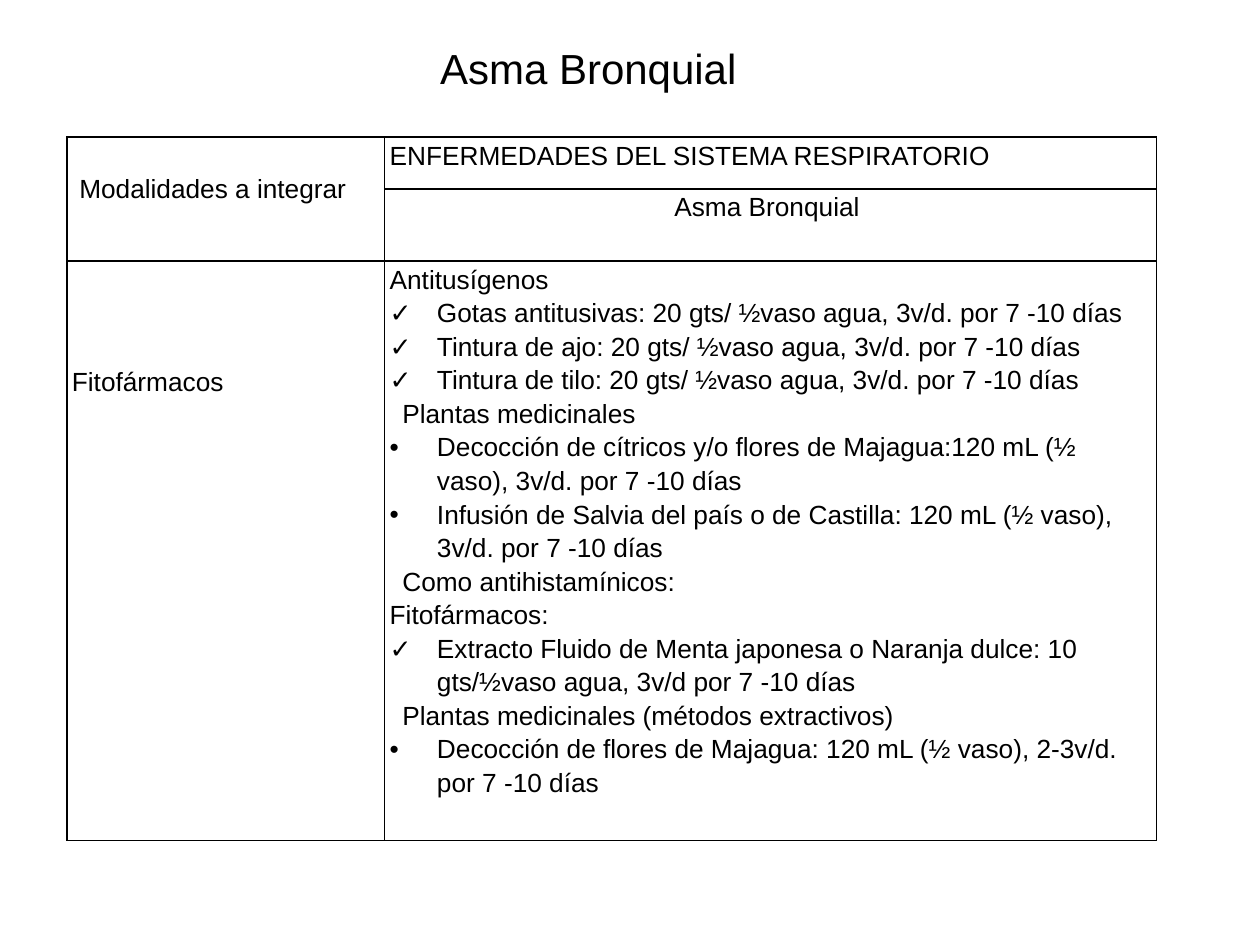
"""Builds a slide with a treatment table for bronchial asthma."""
import pptx
import pptx.dml.color
import pptx.enum.text
import pptx.oxml
import pptx.oxml.ns
import pptx.util

Pt = pptx.util.Pt
ALIGN = pptx.enum.text.PP_ALIGN
NS = pptx.oxml.ns.nsdecls("a")


def rgb(value):
    return pptx.dml.color.RGBColor.from_string(value)


def apply(obj, formats):
    for name, value in formats.items():
        setattr(obj, name, value)


class Deck:
    ink = "000000"
    font = {"name": "Arial"}
    body = {"line_spacing": 1.15, "space_before": Pt(0), "space_after": Pt(0)}
    margins = {"margin_left": Pt(2.9), "margin_right": Pt(2.9),
               "margin_top": Pt(0), "margin_bottom": Pt(0)}

    def __init__(self, prs):
        self.s = prs.slides.add_slide(prs.slide_layouts[6])

    def paragraph(self, p, text, size, formats):
        apply(p, formats)
        r = p.add_run()
        r.text = text
        apply(r.font, {**self.font, "size": Pt(size)})
        r.font.color.rgb = rgb(self.ink)

    def indent(self, p, left, bullet):
        pPr = p._p.get_or_add_pPr()
        pPr.set("marL", str(Pt(left)))
        pPr.set("indent", str(Pt(-left if bullet else 0)))
        if bullet:
            pPr.append(pptx.oxml.parse_xml(f'<a:buFont {NS} typeface="Arial"/>'))
            pPr.append(pptx.oxml.parse_xml(f'<a:buChar {NS} char="{bullet}"/>'))

    def title(self, text, left, top, width, height):
        sp = self.s.shapes.add_textbox(Pt(left), Pt(top), Pt(width), Pt(height))
        tf = sp.text_frame
        tf.word_wrap = True
        self.paragraph(tf.paragraphs[0], text, 24,
                       {"alignment": ALIGN.CENTER, "line_spacing": 0.9})

    def table(self, left, top, widths, heights):
        sp = self.s.shapes.add_table(len(heights), len(widths), Pt(left), Pt(top),
                                     Pt(sum(widths)), Pt(sum(heights)))
        tbl = sp.table
        apply(tbl, {"first_row": False, "horz_banding": False})
        for col, width in zip(tbl.columns, widths):
            col.width = Pt(width)
        for row, height in zip(tbl.rows, heights):
            row.height = Pt(height)
        for cell in tbl.iter_cells():
            cell.fill.background()
            self.borders(cell)
        return tbl

    def borders(self, cell):
        tcPr = cell._tc.get_or_add_tcPr()
        for i, side in enumerate("LRTB"):
            tcPr.insert(i, pptx.oxml.parse_xml(
                f'<a:ln{side} {NS} w="{Pt(1)}"><a:solidFill>'
                f'<a:srgbClr val="{self.ink}"/></a:solidFill></a:ln{side}>'))

    def cell(self, cell, lines, formats=None, margins=None):
        apply(cell, {**self.margins, **(margins or {})})
        tf = cell.text_frame
        for i, (text, left, bullet) in enumerate(lines):
            p = tf.add_paragraph() if i else tf.paragraphs[0]
            self.paragraph(p, text, 15, {**self.body, **(formats or {})})
            self.indent(p, left, bullet)


def head(text, left=0):
    return text, left, None


def check(text):
    return text, 27, "✓"


def dot(text):
    return text, 27, "•"


TREATMENTS = [
    head("Antitusígenos"),
    check("Gotas antitusivas: 20 gts/ ½vaso agua, 3v/d. por 7 -10 días"),
    check("Tintura de ajo: 20 gts/ ½vaso agua, 3v/d. por 7 -10 días"),
    check("Tintura de tilo: 20 gts/ ½vaso agua, 3v/d. por 7 -10 días"),
    head("Plantas medicinales", 7.2),
    dot("Decocción de cítricos y/o flores de Majagua:120 mL (½ vaso), 3v/d. por 7 -10 días"),
    dot("Infusión de Salvia del país o de Castilla: 120 mL (½ vaso), 3v/d. por 7 -10 días"),
    head("Como antihistamínicos:", 7.2),
    head("Fitofármacos:"),
    check("Extracto Fluido de Menta japonesa o Naranja dulce: 10 gts/½vaso agua, 3v/d por 7 -10 días"),
    head("Plantas medicinales (métodos extractivos)", 7.2),
    dot("Decocción de flores de Majagua: 120 mL (½ vaso), 2-3v/d. por 7 -10 días"),
]


def main():
    prs = pptx.Presentation()
    apply(prs, {"slide_width": Pt(720), "slide_height": Pt(540)})
    deck = Deck(prs)
    tbl = deck.table(38.2, 78.4, [181.6, 441.2], [29.5, 41.4, 331])
    tbl.cell(0, 0).merge(tbl.cell(1, 0))
    spaced = {"space_after": Pt(10)}
    deck.cell(tbl.cell(0, 0), [head("Modalidades a integrar", 4.2)],
              margins={"margin_top": Pt(19.2)})
    deck.cell(tbl.cell(0, 1), [head("ENFERMEDADES DEL SISTEMA RESPIRATORIO")], spaced)
    deck.cell(tbl.cell(1, 1), [head("Asma Bronquial")],
              {**spaced, "alignment": ALIGN.CENTER}, {"margin_right": Pt(7.1)})
    deck.cell(tbl.cell(2, 0), [head("Fitofármacos")], spaced, {"margin_top": Pt(58.3)})
    deck.cell(tbl.cell(2, 1), TREATMENTS)
    deck.title("Asma Bronquial", 210.2, 23.8, 252, 32.4)
    prs.save("out.pptx")


if __name__ == "__main__":
    main()
